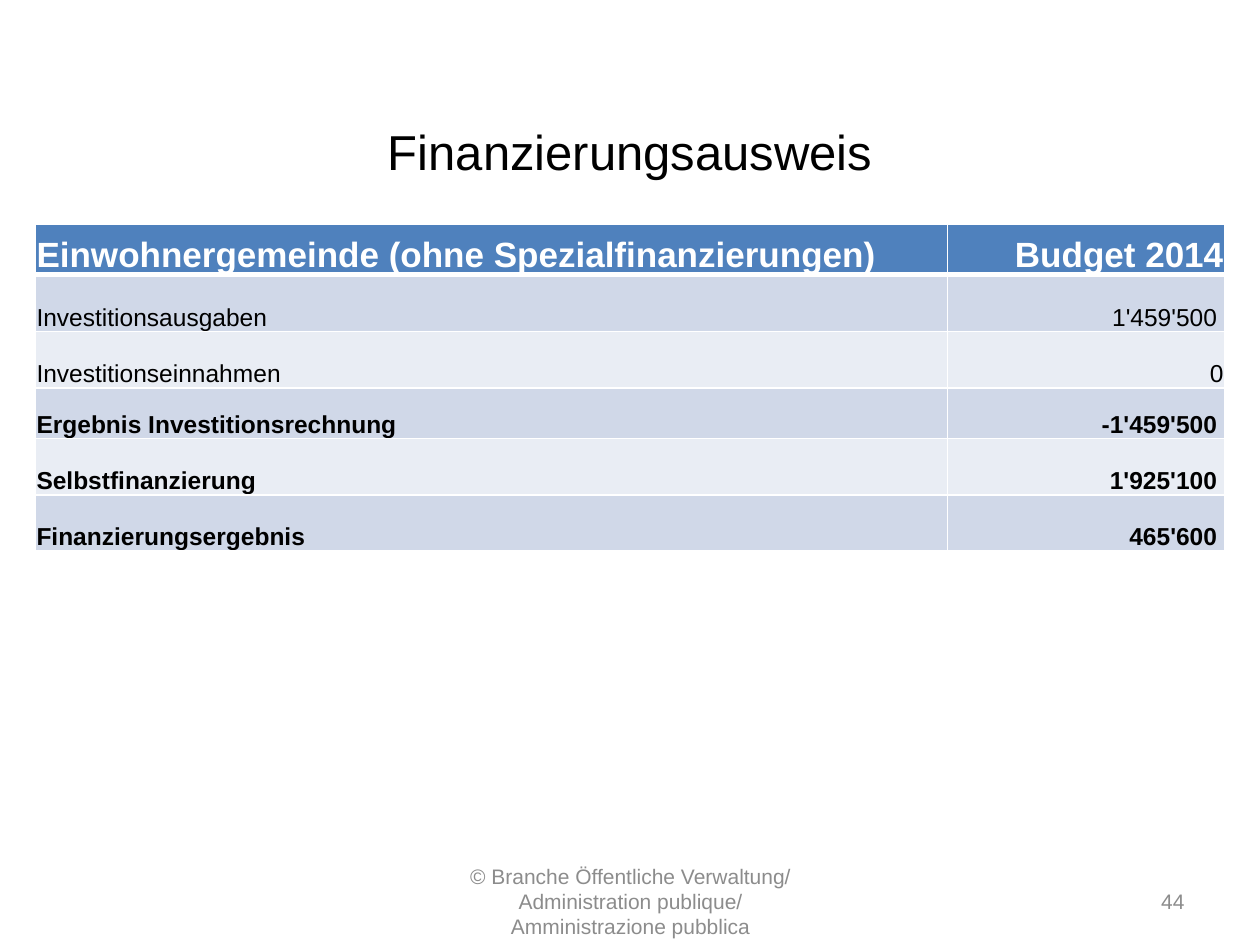
from lxml.etree import SubElement
from pptx import Presentation
from pptx.dml.color import RGBColor
from pptx.enum.text import MSO_ANCHOR, PP_ALIGN
from pptx.oxml.ns import qn
from pptx.util import Inches, Pt

WIDTH, HEIGHT = 10, 7.5
FONT = "Arial"
BLACK, WHITE, GREY = "000000", "FFFFFF", "8C8C8C"
HEADER_FILL, BANDS = "4F81BD", ("D0D8E8", "E9EDF4")
COLUMN_WIDTHS = (7.24, 2.2)
INSET = 0.01
SIGN_SPACE = 0.05  # room kept to the right of an amount

# label, amount, bold, row height, space right of the amount
ROWS = [
    ("Einwohnergemeinde (ohne Spezialfinanzierungen)", "Budget 2014", True, 0.4, 0),
    ("Investitionsausgaben", "1'459'500", False, 0.45, SIGN_SPACE),
    ("Investitionseinnahmen", "0", False, 0.45, 0),
    ("Ergebnis Investitionsrechnung", "-1'459'500", True, 0.4, SIGN_SPACE),
    ("Selbstfinanzierung", "1'925'100", True, 0.45, SIGN_SPACE),
    ("Finanzierungsergebnis", "465'600", True, 0.44, SIGN_SPACE),
]


def rgb(color):
    return RGBColor.from_string(color)


def add_run(p, text, size, color, bold=False):
    r = p.add_run()
    r.text = text
    r.font.name = FONT
    r.font.size = Pt(size)
    r.font.bold = bold
    r.font.color.rgb = rgb(color)


def add_text(s, box, text, size, color, align):
    """Add a text box placed by shares of the slide's size."""
    left, top, width, height = box
    sp = s.shapes.add_textbox(Inches(left * WIDTH), Inches(top * HEIGHT),
                              Inches(width * WIDTH), Inches(height * HEIGHT))
    tf = sp.text_frame
    tf.word_wrap = True
    tf.vertical_anchor = MSO_ANCHOR.MIDDLE
    p = tf.paragraphs[0]
    p.alignment = align
    add_run(p, text, size, color)


def set_borders(cell, bottom_width):
    """Draw white cell borders; they must come before the cell's fill."""
    tc_pr = cell._tc.get_or_add_tcPr()
    for side, width in (("L", 1), ("R", 1), ("T", 1), ("B", bottom_width)):
        ln = SubElement(tc_pr, qn(f"a:ln{side}"), w=str(Pt(width)))
        fill = SubElement(ln, qn("a:solidFill"))
        SubElement(fill, qn("a:srgbClr"), val=WHITE)


def fill_cell(cell, text, align, bold, header, fill, space_right=0):
    set_borders(cell, 3 if header else 1)
    cell.fill.solid()
    cell.fill.fore_color.rgb = rgb(fill)
    cell.vertical_anchor = MSO_ANCHOR.BOTTOM
    cell.margin_left = cell.margin_top = Inches(INSET)
    cell.margin_right = Inches(INSET + space_right)
    cell.margin_bottom = 0
    p = cell.text_frame.paragraphs[0]
    p.alignment = align
    add_run(p, text, 20 if header else 14, WHITE if header else BLACK, bold)


def add_budget_table(s, left, top):
    height = sum(row[3] for row in ROWS)
    table = s.shapes.add_table(len(ROWS), len(COLUMN_WIDTHS), Inches(left), Inches(top),
                               Inches(sum(COLUMN_WIDTHS)), Inches(height)).table
    for column, width in zip(table.columns, COLUMN_WIDTHS):
        column.width = Inches(width)
    for i, (label, amount, bold, row_height, space) in enumerate(ROWS):
        table.rows[i].height = Inches(row_height)
        header = i == 0
        fill = HEADER_FILL if header else BANDS[(i - 1) % 2]
        fill_cell(table.cell(i, 0), label, PP_ALIGN.LEFT, bold, header, fill)
        fill_cell(table.cell(i, 1), amount, PP_ALIGN.RIGHT, bold, header, fill, space)


def main():
    prs = Presentation()
    prs.slide_width, prs.slide_height = Inches(WIDTH), Inches(HEIGHT)
    s = prs.slides.add_slide(prs.slide_layouts[6])
    add_text(s, (0.05, 0.112, 0.9, 0.095), "Finanzierungsausweis", 28, BLACK, PP_ALIGN.CENTER)
    add_budget_table(s, 0.28, 1.78)
    footer_top, footer_height = 0.927, 0.053
    add_text(s, (0.717, footer_top, 0.233, footer_height), "44", 12, GREY, PP_ALIGN.RIGHT)
    add_text(s, (0.342, footer_top, 0.317, footer_height),
             "© Branche Öffentliche Verwaltung/ Administration publique/ Amministrazione pubblica",
             12, GREY, PP_ALIGN.CENTER)
    prs.save("out.pptx")


if __name__ == "__main__":
    main()
